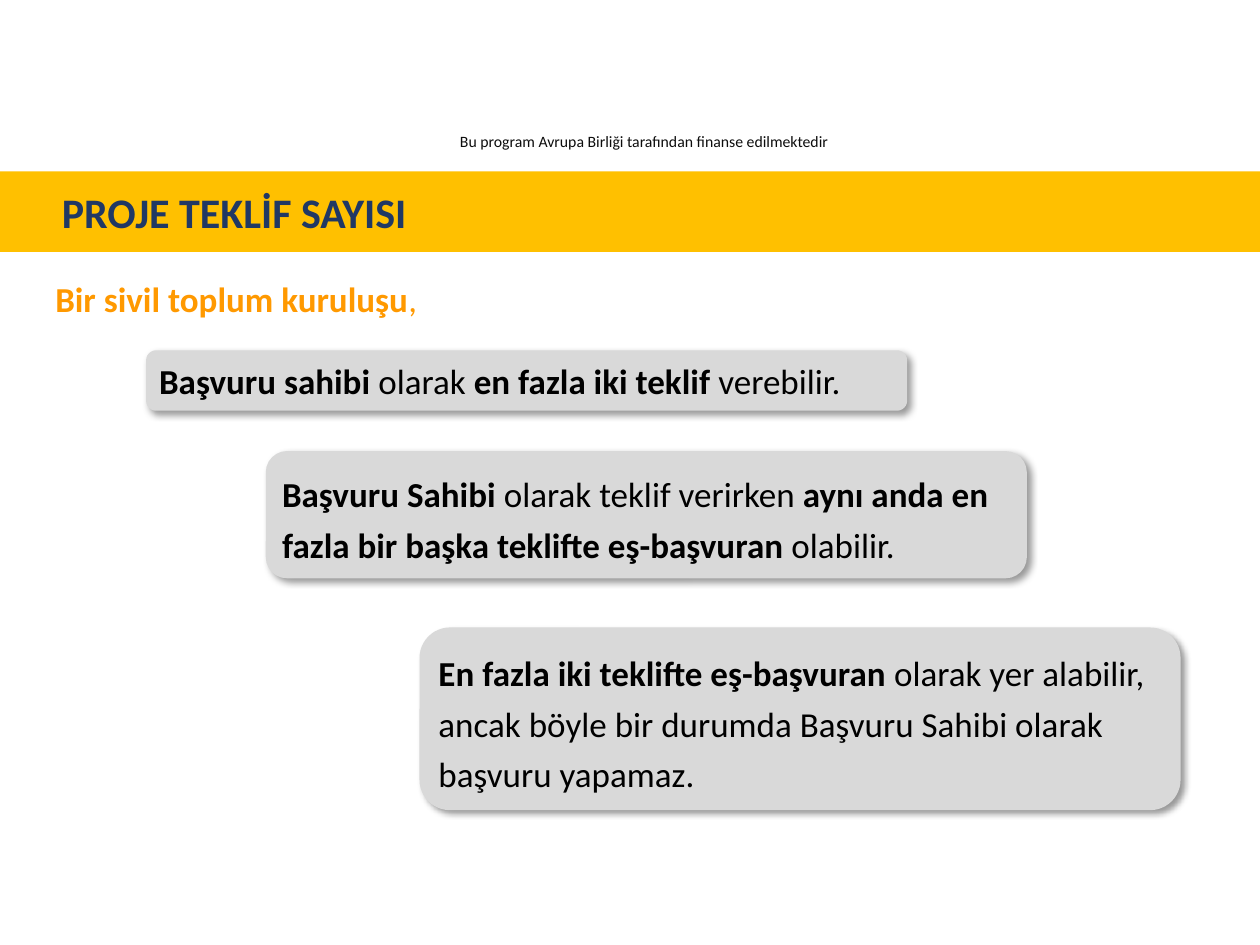
from dataclasses import dataclass

from lxml import etree
from pptx import Presentation
from pptx.dml.color import RGBColor
from pptx.enum.shapes import MSO_SHAPE
from pptx.enum.text import MSO_ANCHOR, MSO_AUTO_SIZE, PP_ALIGN
from pptx.oxml.ns import qn
from pptx.util import Inches, Pt

ROUNDED = MSO_SHAPE.ROUNDED_RECTANGLE
LEFT, CENTER = PP_ALIGN.LEFT, PP_ALIGN.CENTER
TOP, MIDDLE = MSO_ANCHOR.TOP, MSO_ANCHOR.MIDDLE
NO_AUTOFIT = MSO_AUTO_SIZE.NONE
TITLE_ONLY = 5
COLUMNS, ROWS = 100, 75


@dataclass(frozen=True)
class Theme:
    font: str = "Calibri"
    banner: str = "FFC000"
    title: str = "203864"
    accent: str = "FF9900"
    card: str = "D9D9D9"
    text: str = "000000"
    note: str = "0D0D0D"
    title_size: int = 24
    body_size: int = 20
    note_size: int = 9


class SlideBuilder:
    """Places styled elements on a grid of 100 columns by 75 rows."""

    def __init__(self, presentation, theme):
        self.theme = theme
        self.column = presentation.slide_width / COLUMNS
        self.row = presentation.slide_height / ROWS
        self.slide = presentation.slides.add_slide(presentation.slide_layouts[TITLE_ONLY])

    def place(self, left, top, width, height):
        return (round(left * self.column), round(top * self.row),
                round(width * self.column), round(height * self.row))

    def set_text(self, shape, runs, size, color, align=LEFT, anchor=TOP,
                 side_inset=0.1, line_spacing=None):
        frame = shape.text_frame
        frame.auto_size = NO_AUTOFIT
        frame.word_wrap = True
        frame.vertical_anchor = anchor
        frame.margin_left = frame.margin_right = Inches(side_inset)
        frame.margin_top = frame.margin_bottom = Inches(0.05)
        paragraph = frame.paragraphs[0]
        paragraph.alignment = align
        if line_spacing:
            paragraph.line_spacing = line_spacing
        for text, bold in runs:
            run = paragraph.add_run()
            run.text = text
            run.font.name = self.theme.font
            run.font.size = Pt(size)
            run.font.bold = bold
            run.font.color.rgb = RGBColor.from_string(color)

    def fill(self, shape, color):
        shape.fill.solid()
        shape.fill.fore_color.rgb = RGBColor.from_string(color)
        shape.line.fill.background()

    def cast_shadow(self, shape):
        shape.shadow.inherit = False
        effects = shape._element.spPr.find(qn("a:effectLst"))
        shadow = etree.SubElement(effects, qn("a:outerShdw"), blurRad=str(Pt(4)),
                                  dist=str(Pt(3)), dir=str(45 * 60000),
                                  algn="tl", rotWithShape="0")
        color = etree.SubElement(shadow, qn("a:srgbClr"), val=self.theme.text)
        etree.SubElement(color, qn("a:alpha"), val="40000")

    def banner_title(self, text, *area):
        title = self.slide.shapes.title
        title.left, title.top, title.width, title.height = self.place(*area)
        self.fill(title, self.theme.banner)
        self.set_text(title, [(text, True)], self.theme.title_size, self.theme.title,
                      anchor=MIDDLE, side_inset=0.49)

    def text(self, runs, size, color, area, align=LEFT):
        box = self.slide.shapes.add_textbox(*self.place(*area))
        self.set_text(box, runs, size, color, align)

    def card(self, runs, area, line_spacing):
        card = self.slide.shapes.add_shape(ROUNDED, *self.place(*area))
        self.fill(card, self.theme.card)
        self.cast_shadow(card)
        self.set_text(card, runs, self.theme.body_size, self.theme.text,
                      anchor=MIDDLE, side_inset=0.08, line_spacing=line_spacing)


def main():
    presentation = Presentation()
    presentation.slide_width, presentation.slide_height = Inches(10), Inches(7.5)
    theme = Theme()
    builder = SlideBuilder(presentation, theme)

    # Funding note and title banner
    builder.text([("Bu program Avrupa Birliği tarafından finanse edilmektedir", False)],
                 theme.note_size, theme.note, (27.7, 10, 46.8, 2.5), CENTER)
    builder.banner_title("PROJE TEKLİF SAYISI", 0, 13.6, 100, 6.4)

    # Lead-in
    builder.text([("Bir sivil toplum kuruluşu", True), (",", False)],
                 theme.body_size, theme.accent, (3.4, 21.5, 59.1, 5.6))

    # Stepped rule cards: left, top, height, line spacing, runs
    card_width = 60.4
    cards = [
        (11.6, 27.8, 4.8, None,
         [("Başvuru sahibi ", True), ("olarak ", False),
          ("en fazla iki teklif ", True), ("verebilir.", False)]),
        (21.1, 35.8, 10.1, 1.2,
         [("Başvuru Sahibi ", True), ("olarak teklif verirken ", False),
          ("aynı anda en fazla bir başka teklifte eş-başvuran ", True),
          ("olabilir.", False)]),
        (33.3, 49.8, 14.5, 1.2,
         [("En fazla iki teklifte eş-başvuran ", True),
          ("olarak yer alabilir, ancak böyle bir durumda Başvuru Sahibi "
           "olarak başvuru yapamaz.", False)]),
    ]
    for left, top, height, line_spacing, runs in cards:
        builder.card(runs, (left, top, card_width, height), line_spacing)

    presentation.save("out.pptx")


if __name__ == "__main__":
    main()
